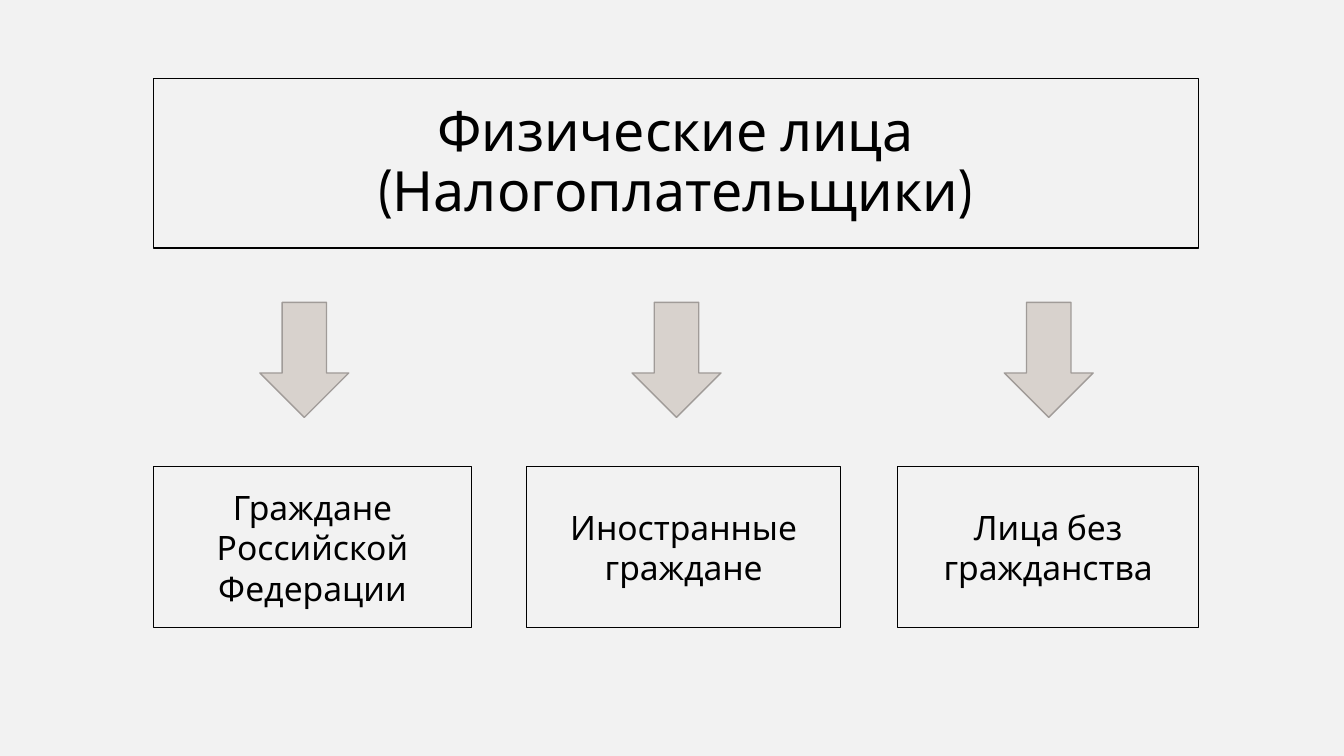
import pptx
import pptx.dml.color
import pptx.enum.shapes
import pptx.enum.text
import pptx.util
from pptx.util import Cm

COLORS = {
    "background": "F2F2F2",
    "text": "000000",
    "border": "000000",
    "arrow": "D8D2CD",
    "arrow_border": "A09B98",
}
FONT = "Cabin"
COMPARISON_LAYOUT = 4

# Placeholder index, left and width in cm, text
CATEGORIES = [
    (1, 3.86, 8.03, "Граждане Российской Федерации"),
    (2, 13.28, 7.9, "Иностранные граждане"),
    (3, 22.63, 7.57, "Лица без гражданства"),
]
ARROW_LEFT, ARROW_STEP = 6.55, 9.38


def rgb(name):
    return pptx.dml.color.RGBColor.from_string(COLORS[name])


def set_line(shape, color, width):
    shape.line.color.rgb = rgb(color)
    shape.line.width = pptx.util.Pt(width)


def place(shape, left, top, width, height):
    """Move and size a shape, with lengths in centimetres."""
    shape.left, shape.top = Cm(left), Cm(top)
    shape.width, shape.height = Cm(width), Cm(height)


def write_text(shape, text, *, size, line_spacing=1.0, color="text"):
    frame = shape.text_frame
    frame.word_wrap = True
    frame.auto_size = pptx.enum.text.MSO_AUTO_SIZE.NONE
    frame.vertical_anchor = pptx.enum.text.MSO_ANCHOR.MIDDLE
    paragraph = frame.paragraphs[0]
    paragraph.text = text
    paragraph.alignment = pptx.enum.text.PP_ALIGN.CENTER
    paragraph.line_spacing = line_spacing
    paragraph.space_before = pptx.util.Pt(0)
    for run in paragraph.runs:
        run.font.name = FONT
        run.font.size = pptx.util.Pt(size)
        run.font.bold = False
        run.font.color.rgb = rgb(color)


def remove_bullet(shape):
    properties = shape.text_frame.paragraphs[0]._p.get_or_add_pPr()
    properties.set("marL", "0")
    properties.set("indent", "0")
    properties.append(pptx.oxml.parse_xml(
        f'<a:buNone {pptx.oxml.ns.nsdecls("a")}/>'))


def fill_box(shape, text, position, **text_format):
    """Turn a placeholder into a bordered box with centred text."""
    place(shape, *position)
    set_line(shape, "border", 0.75)
    write_text(shape, text, **text_format)


def add_down_arrow(slide, left):
    arrow = slide.shapes.add_shape(
        pptx.enum.shapes.MSO_SHAPE.DOWN_ARROW,
        Cm(left), Cm(7.62), Cm(2.24), Cm(2.9))
    arrow.shadow.inherit = False
    arrow.fill.solid()
    arrow.fill.fore_color.rgb = rgb("arrow")
    set_line(arrow, "arrow_border", 1)


def remove_empty_placeholders(slide):
    for shape in list(slide.placeholders):
        if not shape.text_frame.text:
            shape._element.getparent().remove(shape._element)


def main():
    presentation = pptx.Presentation()
    presentation.slide_width, presentation.slide_height = Cm(33.87), Cm(19.05)
    slide = presentation.slides.add_slide(
        presentation.slide_layouts[COMPARISON_LAYOUT])
    slide.background.fill.solid()
    slide.background.fill.fore_color.rgb = rgb("background")

    fill_box(slide.shapes.title, "Физические лица\v(Налогоплательщики)",
             (3.86, 1.98, 26.34, 4.27), size=39.6, line_spacing=0.9)
    for column, (index, left, width, text) in enumerate(CATEGORIES):
        body = slide.placeholders[index]
        fill_box(body, text, (left, 11.76, width, 4.06), size=24)
        remove_bullet(body)
        add_down_arrow(slide, ARROW_LEFT + column * ARROW_STEP)

    remove_empty_placeholders(slide)
    presentation.save("out.pptx")


if __name__ == "__main__":
    main()
